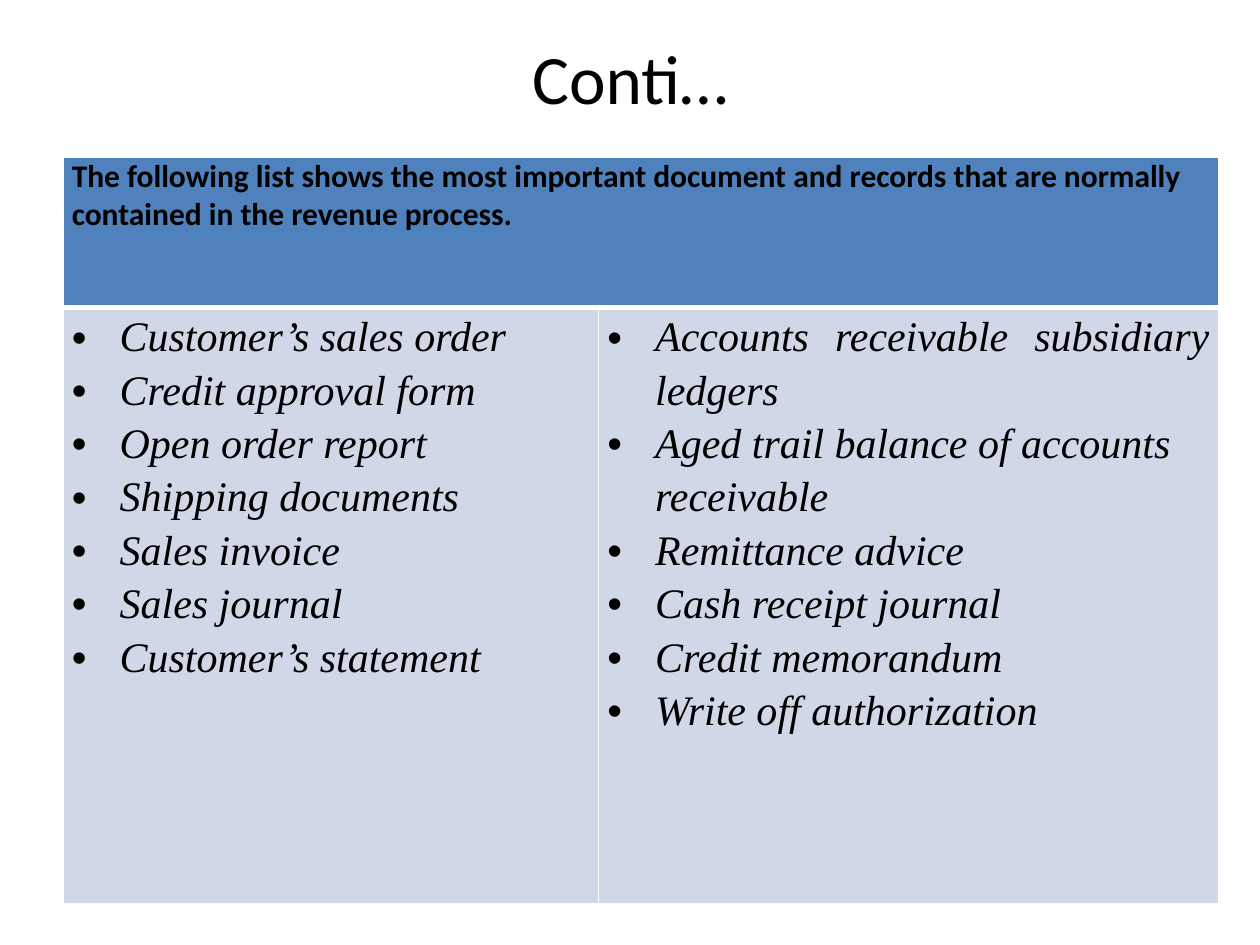
import pptx
import pptx.dml.color
import pptx.enum.text
import pptx.oxml
import pptx.oxml.ns
import pptx.util
from pptx.util import Inches

ALIGN = pptx.enum.text.PP_ALIGN
DOCUMENTS = [
    "Customer’s sales order",
    "Credit approval form",
    "Open order report",
    "Shipping documents",
    "Sales invoice",
    "Sales journal",
    "Customer’s statement",
]
RECORDS = [
    "Accounts receivable subsidiary ledgers",
    "Aged trail balance of accounts receivable",
    "Remittance advice",
    "Cash receipt journal",
    "Credit memorandum",
    "Write off authorization",
]


def color(value):
    return pptx.dml.color.RGBColor.from_string(value)


def xml_element(markup):
    """Parse one DrawingML element, given without its namespace declaration."""
    name, rest = markup[1:].split(" ", 1)
    return pptx.oxml.parse_xml(f"<{name} {pptx.oxml.ns.nsdecls('a')} {rest}")


class SlideBuilder:
    heading_font = "Calibri"
    list_font = "Times New Roman"
    text_color = "000000"
    header_fill = "4F81BD"
    body_fill = "D0D8E8"
    border_color = "FFFFFF"
    indent = Inches(0.38)

    def __init__(self, slide):
        self.slide = slide

    def format_runs(self, paragraph, font, size, bold=False, italic=False):
        for run in paragraph.runs:
            run.font.name = font
            run.font.size = pptx.util.Pt(size)
            run.font.bold = bold
            run.font.italic = italic
            run.font.color.rgb = color(self.text_color)

    def title(self, text, left, top, width, height):
        shape = self.slide.shapes.add_textbox(left, top, width, height)
        frame = shape.text_frame
        frame.word_wrap = True
        frame.vertical_anchor = pptx.enum.text.MSO_ANCHOR.MIDDLE
        frame.text = text
        paragraph = frame.paragraphs[0]
        paragraph.alignment = ALIGN.CENTER
        self.format_runs(paragraph, self.heading_font, 39.6)

    def table(self, left, top, column_widths, row_heights):
        shape = self.slide.shapes.add_table(
            len(row_heights), len(column_widths), left, top,
            sum(column_widths), sum(row_heights))
        for column, width in zip(shape.table.columns, column_widths):
            column.width = width
        for row, height in zip(shape.table.rows, row_heights):
            row.height = height
        return shape.table

    def style_cell(self, cell, fill, top_border=1, bottom_border=1):
        cell.margin_left = cell.margin_right = Inches(0.07)
        cell.margin_top = cell.margin_bottom = 0
        cell.fill.solid()
        cell.fill.fore_color.rgb = color(fill)
        borders = {"L": 1, "R": 1, "T": top_border, "B": bottom_border}
        properties = cell._tc.get_or_add_tcPr()
        for index, (side, points) in enumerate(borders.items()):
            properties.insert(index, xml_element(
                f'<a:ln{side} w="{pptx.util.Pt(points)}"><a:solidFill>'
                f'<a:srgbClr val="{self.border_color}"/></a:solidFill></a:ln{side}>'))

    def header_cell(self, cell, text):
        self.style_cell(cell, self.header_fill, bottom_border=3)
        cell.text_frame.text = text
        self.format_runs(cell.text_frame.paragraphs[0], self.heading_font, 18, bold=True)

    def list_cell(self, cell, items, left_aligned=()):
        self.style_cell(cell, self.body_fill, top_border=3)
        cell.text_frame.text = "\n".join(items)
        for paragraph in cell.text_frame.paragraphs:
            is_left = paragraph.text in left_aligned
            paragraph.alignment = ALIGN.LEFT if is_left else ALIGN.JUSTIFY
            paragraph.line_spacing = 1.15
            self.format_runs(paragraph, self.list_font, 24, italic=True)
            self.bullet(paragraph)

    def bullet(self, paragraph):
        properties = paragraph._p.get_or_add_pPr()
        properties.set("marL", str(self.indent))
        properties.set("indent", str(-self.indent))
        for markup in (
                '<a:buFont typeface="Arial"/>',
                '<a:buChar char="•"/>',
                f'<a:tabLst ><a:tab pos="{Inches(0.5)}" algn="l"/></a:tabLst>'):
            properties.append(xml_element(markup))


def main():
    presentation = pptx.Presentation()
    presentation.slide_width = Inches(10)
    presentation.slide_height = Inches(7.5)
    builder = SlideBuilder(presentation.slides.add_slide(presentation.slide_layouts[6]))

    builder.title("Conti…", Inches(0.5), Inches(0.3), Inches(9), Inches(0.62))
    table = builder.table(
        Inches(0.5), Inches(1.25),
        [Inches(4.25), Inches(4.92)], [Inches(1.19), Inches(4.73)])
    table.cell(0, 0).merge(table.cell(0, 1))
    builder.header_cell(
        table.cell(0, 0),
        "The following list shows the most important document and records "
        "that are normally contained in the revenue process.")
    builder.list_cell(table.cell(1, 0), DOCUMENTS)
    builder.list_cell(table.cell(1, 1), RECORDS, left_aligned=RECORDS[1:2])

    presentation.save("out.pptx")


if __name__ == "__main__":
    main()
